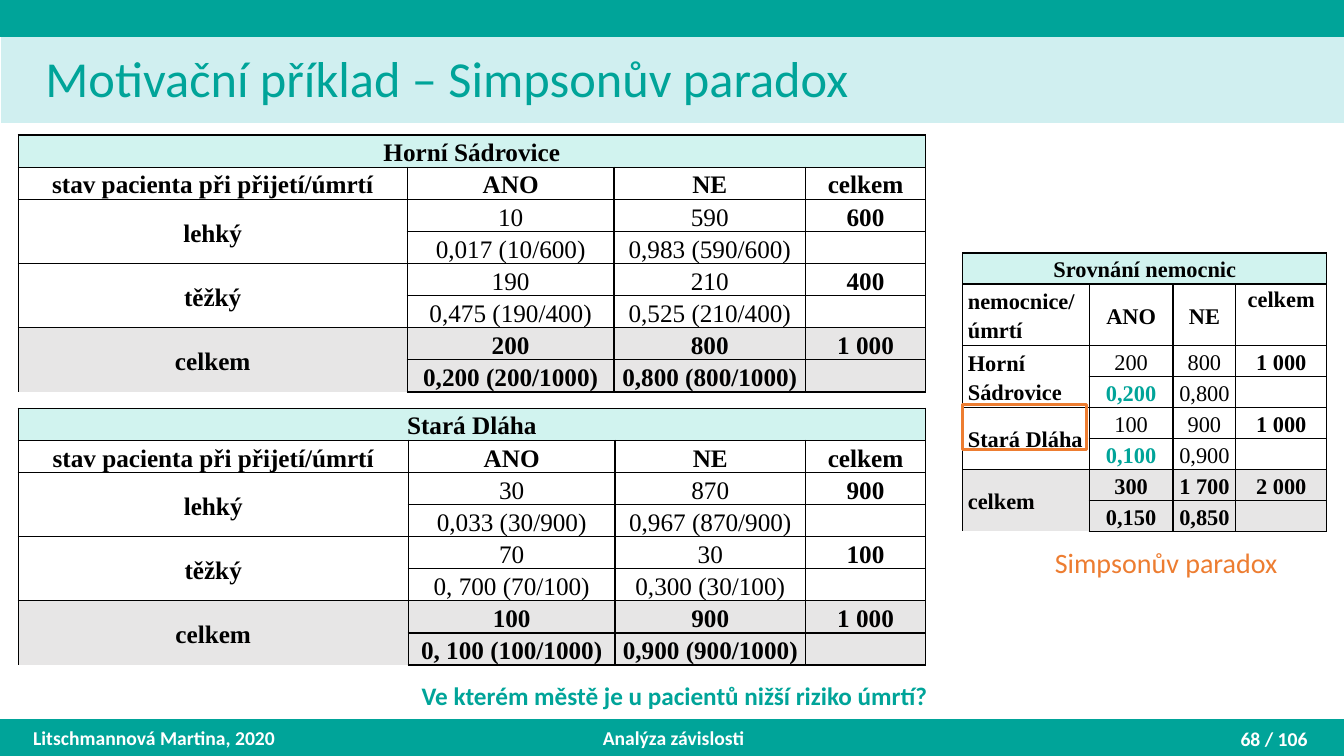
from dataclasses import dataclass
from typing import Any

from lxml.etree import SubElement
from pptx import Presentation
from pptx.dml.color import RGBColor
from pptx.enum.shapes import MSO_SHAPE as Preset
from pptx.enum.text import MSO_ANCHOR as Anchor, MSO_AUTO_SIZE as AutoSize, PP_ALIGN as Align
from pptx.oxml.ns import qn
from pptx.util import Inches, Pt

TEAL, PALE, MINT, GREY = "00A499", "D0EFF0", "D1F3EF", "E7E6E6"
BLACK, WHITE, ORANGE = "000000", "FFFFFF", "ED7D31"
SLIDE_WIDTH, SLIDE_HEIGHT = Inches(13.33), Inches(7.5)
PLAIN_TABLE_STYLE = "{2D5ABB26-0587-4C30-8999-92F81FD0307C}"


@dataclass
class Area:
    """Left, top, width and height in percent of the slide."""
    left: float
    top: float
    width: float
    height: float

    def lengths(self) -> list[int]:
        return [across(self.left), down(self.top), across(self.width), down(self.height)]


@dataclass
class Bar:
    area: Area
    line: str
    line_width: float
    fill: str | None = None


@dataclass
class Label:
    area: Area
    text: str
    size: float
    color: str
    align: Any = Align.CENTER
    bold: bool = True
    anchor: Any = Anchor.MIDDLE


@dataclass
class Group:
    name: str
    yes: tuple[str, str]
    no: tuple[str, str]
    total: str


@dataclass
class RiskTable:
    left: float
    top: float
    width: float
    row: float
    columns: list[float]
    title: str
    corner: str
    groups: list[Group]
    size: float = 18
    label_align: Any = Align.CENTER
    header_rows: int = 1
    risk_color: str = BLACK


BARS = [
    Bar(Area(0, 95.2, 100, 4.8), TEAL, 1, TEAL),
    Bar(Area(0.08, 4.8, 100, 11.47), PALE, 0.75, PALE),
    Bar(Area(0, 0, 100, 4.8), TEAL, 1, TEAL),
]
HIGHLIGHT = Bar(Area(71.64, 53.47, 9.23, 6), ORANGE, 2.25)
TITLE = Label(Area(2.63, 5.33, 89.12, 10.8), "Motivační příklad – Simpsonův paradox",
              36, TEAL, Align.LEFT, False)
LABELS = [
    Label(Area(1.73, 95.2, 22.5, 4.67), "Litschmannová Martina, 2020", 14, WHITE, Align.LEFT),
    Label(Area(33.23, 95.2, 33.76, 4.8), "Analýza závislosti", 14, WHITE),
    Label(Area(75.54, 95.33, 22.5, 4.8), "68 / 106", 14, WHITE, Align.RIGHT),
    Label(Area(16.73, 89.33, 67.37, 5.33), "Ve kterém městě je u pacientů nižší riziko úmrtí? ",
          18, TEAL, anchor=Anchor.TOP),
    Label(Area(76.82, 71.47, 19.88, 5.87), "Simpsonův paradox", 20, ORANGE,
          bold=False, anchor=Anchor.TOP),
]
TABLES = [
    RiskTable(1.35, 17.87, 67.52, 4.24, [3.86, 2.05, 1.9, 1.19],
              "Horní Sádrovice", "stav pacienta při přijetí/úmrtí", [
        Group("lehký", ("10", "0,017 (10/600)"), ("590", "0,983 (590/600)"), "600"),
        Group("těžký", ("190", "0,475 (190/400)"), ("210", "0,525 (210/400)"), "400"),
        Group("celkem", ("200", "0,200 (200/1000)"), ("800", "0,800 (800/1000)"), "1 000")]),
    RiskTable(1.35, 54, 67.52, 4.24, [3.87, 2.05, 1.89, 1.19],
              "Stará Dláha", "stav pacienta při přijetí/úmrtí", [
        Group("lehký", ("30", "0,033 (30/900)"), ("870", "0,967 (870/900)"), "900"),
        Group("těžký", ("70", "0, 700 (70/100)"), ("30", "0,300 (30/100)"), "100"),
        Group("celkem", ("100", "0, 100 (100/1000)"), ("900", "0,900 (900/1000)"), "1 000")]),
    RiskTable(71.64, 33.47, 27.08, 4.09, [1.25, 0.83, 0.62, 0.9],
              "Srovnání nemocnic", "nemocnice/úmrtí", [
        Group("Horní Sádrovice", ("200", "0,200"), ("800", "0,800"), "1 000"),
        Group("Stará Dláha", ("100", "0,100"), ("900", "0,900"), "1 000"),
        Group("celkem", ("300", "0,150"), ("1 700", "0,850"), "2 000")],
              16, Align.LEFT, 2, TEAL),
]


def across(percent: float) -> int:
    return round(SLIDE_WIDTH * percent / 100)


def down(percent: float) -> int:
    return round(SLIDE_HEIGHT * percent / 100)


def rgb(color: str) -> RGBColor:
    return RGBColor.from_string(color)


def apply(target: Any, values: dict[str, Any]) -> None:
    for name, value in values.items():
        setattr(target, name, value)


def write(frame: Any, text: str, size: float, color: str, bold: bool, align: Any,
          font: str = "Calibri", spacing: float = 1.0) -> None:
    paragraph = frame.paragraphs[0]
    apply(paragraph, {"alignment": align, "line_spacing": spacing})
    run = paragraph.add_run()
    run.text = text
    apply(run.font, {"name": font, "size": Pt(size), "bold": bold})
    run.font.color.rgb = rgb(color)


def draw_bar(slide: Any, bar: Bar) -> None:
    shape = slide.shapes.add_shape(Preset.RECTANGLE, *bar.area.lengths())
    shape.shadow.inherit = False
    if bar.fill:
        shape.fill.solid()
        shape.fill.fore_color.rgb = rgb(bar.fill)
    else:
        shape.fill.background()
    shape.line.color.rgb = rgb(bar.line)
    shape.line.width = Pt(bar.line_width)


def fill_label(box: Any, label: Label, spacing: float = 1.0) -> None:
    apply(box, dict(zip(("left", "top", "width", "height"), label.area.lengths())))
    apply(box.text_frame, {"word_wrap": True, "auto_size": AutoSize.NONE,
                           "vertical_anchor": label.anchor})
    write(box.text_frame, label.text, label.size, label.color, label.bold, label.align,
          spacing=spacing)


def format_cell(cell: Any, sides: str, fill: str | None, anchor: Any) -> None:
    apply(cell, {"margin_left": Inches(0.05), "margin_right": Inches(0.05),
                 "margin_top": 0, "margin_bottom": 0, "vertical_anchor": anchor})
    properties = cell._tc.get_or_add_tcPr()
    for side in sides:
        border = SubElement(properties, qn(f"a:ln{side}"), w=str(Pt(1)))
        SubElement(SubElement(border, qn("a:solidFill")), qn("a:srgbClr"), val=BLACK)
    if fill:
        cell.fill.solid()
        cell.fill.fore_color.rgb = rgb(fill)
    else:
        cell.fill.background()


def draw_table(slide: Any, risk: RiskTable) -> None:
    rows = [[risk.title, "", "", ""], [risk.corner, "ANO", "NE", "celkem"]]
    for group in risk.groups:
        rows += [[group.name, group.yes[0], group.no[0], group.total],
                 ["", group.yes[1], group.no[1], ""]]
    area = Area(risk.left, risk.top, risk.width, risk.row * (len(rows) - 1 + risk.header_rows))
    holder = slide.shapes.add_table(len(rows), len(risk.columns), *area.lengths())
    table = holder.table
    apply(table, {"first_row": False, "horz_banding": False})
    for style in holder.element.iter(qn("a:tableStyleId")):
        style.text = PLAIN_TABLE_STYLE
    for column, share in zip(table.columns, risk.columns):
        column.width = across(risk.width * share / sum(risk.columns))

    last_group = len(rows) - 2
    for r, texts in enumerate(rows):
        table.rows[r].height = down(risk.row * (risk.header_rows if r == 1 else 1))
        fill = MINT if r == 0 else GREY if r >= last_group else None
        # The two rows of a group share one outline
        sides = "LRTB" if r < 2 else "LRT" if r % 2 == 0 else "LRB"
        for c, text in enumerate(texts):
            cell = table.cell(r, c)
            anchor = Anchor.TOP if (r, c) == (1, 3) else Anchor.MIDDLE
            format_cell(cell, sides, fill, anchor)
            is_risk = c == 1 and r % 2 == 1 and 1 < r < last_group
            color = risk.risk_color if is_risk else BLACK
            bold = r < 2 or r >= last_group or c in (0, 3) or color != BLACK
            align = risk.label_align if c == 0 and r > 0 else Align.CENTER
            if text:
                write(cell.text_frame, text, risk.size, color, bold, align,
                      "Times New Roman", 1.15)
            else:
                cell.text_frame.paragraphs[0].font.size = Pt(risk.size)
    table.cell(0, 0).merge(table.cell(0, 3))
    for r in range(2, len(rows), 2):
        table.cell(r, 0).merge(table.cell(r + 1, 0))


def main() -> None:
    deck = Presentation()
    apply(deck, {"slide_width": SLIDE_WIDTH, "slide_height": SLIDE_HEIGHT})
    slide = deck.slides.add_slide(deck.slide_layouts[5])

    # Bands, with the title brought in front of them
    for bar in BARS:
        draw_bar(slide, bar)
    heading = slide.shapes.title
    heading.element.getparent().append(heading.element)
    fill_label(heading, TITLE, 0.9)

    # Tables, highlighted hospital and labels
    for risk in TABLES:
        draw_table(slide, risk)
    draw_bar(slide, HIGHLIGHT)
    for label in LABELS:
        fill_label(slide.shapes.add_textbox(*label.area.lengths()), label)
    deck.save("out.pptx")


if __name__ == "__main__":
    main()
